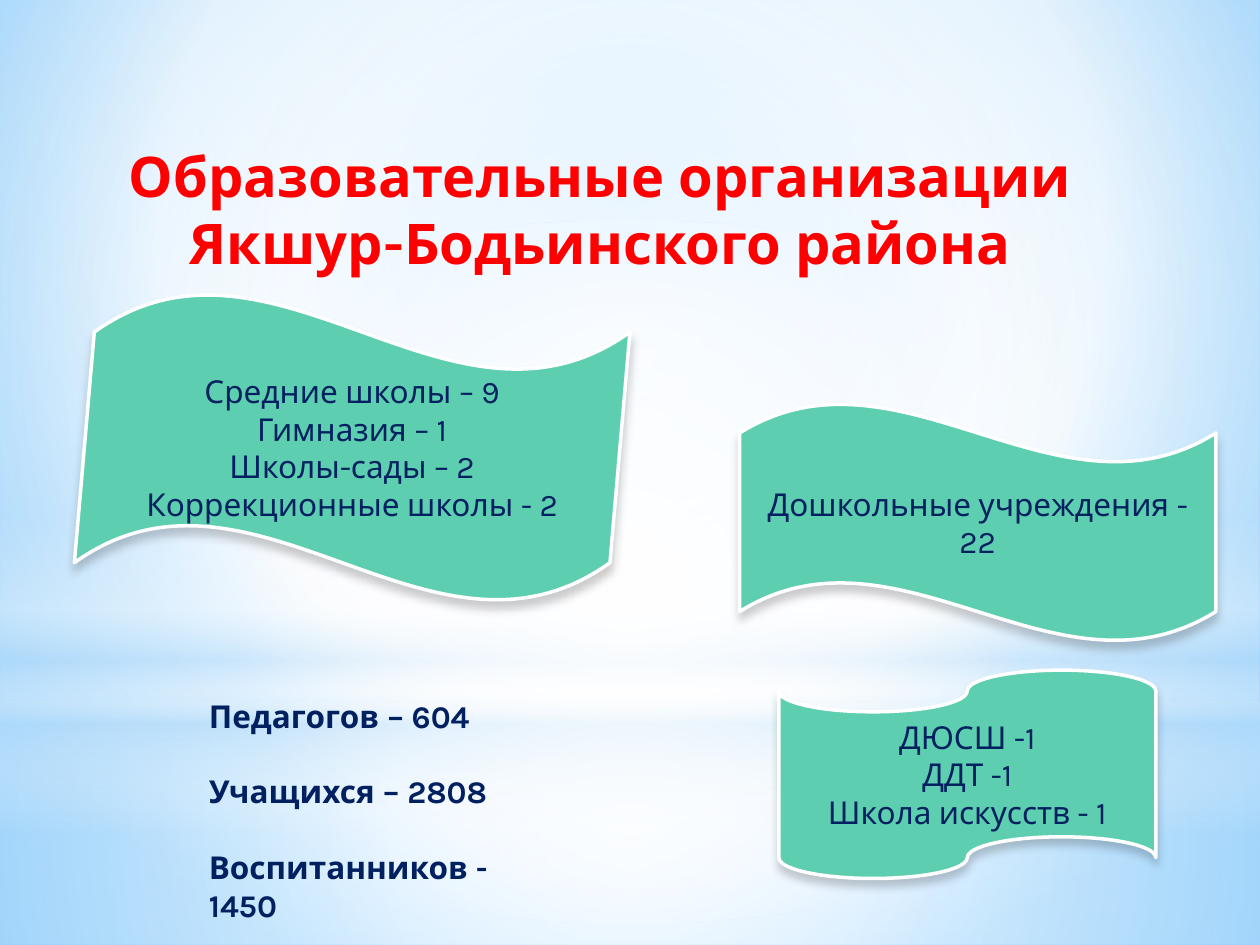
from lxml import etree
from pptx import Presentation
from pptx.dml.color import RGBColor
from pptx.enum import shapes, text
from pptx.oxml import ns
from pptx.util import Cm, Pt

FONT = "Karla"
COLORS = {"title": "FF0000", "text": "002060", "card": "5DCEAF", "white": "FFFFFF",
          "sky": "B4DCFA", "edge": "9ED5FF", "deep": "5BB9FF", "shadow": "000000"}
KIND = shapes.MSO_SHAPE
CENTER = (50, 50, 50, 50)

# Gradient stops: position %, colour, opacity %
BACKGROUND = [(0, "edge", 100), (60, "white", 100), (100, "deep", 100)]
# Shape, box in cm, stops, focus rectangle (None: top to bottom)
GLOWS = [
    (KIND.RECTANGLE, (0, 14.17, 25.4, 4.88),
     [(0, "white", 91), (37, "white", 76), (100, "sky", 79)], CENTER),
    (KIND.RECTANGLE, (0, 0, 25.4, 14.17),
     [(0, "white", 89), (48, "white", 62), (100, "sky", 79)], CENTER),
    (KIND.RECTANGLE, (0, 10.46, 25.4, 6.35),
     [(0, "white", 0), (29, "white", 30), (45, "sky", 40),
      (55, "white", 26), (65, "sky", 60), (100, "white", 0)], None),
    (KIND.OVAL, (0, 4.45, 25.4, 14.17),
     [(0, "white", 100), (56, "white", 0)], CENTER),
]
TITLE = "Образовательные организации Якшур-Бодьинского района"
TITLE_BOX = (1.5, 2.72, 21.2, 4.7)
# Shape, box in cm, adjustments, lines
CARDS = [
    (KIND.WAVE, (1.5, 5.92, 11.2, 6.2), (0.125, -0.018),
     ["Средние школы – 9", "Гимназия – 1", "Школы-сады – 2", "Коррекционные школы - 2"]),
    (KIND.WAVE, (14.91, 8.13, 9.6, 4.8), (), ["Дошкольные учреждения - 22"]),
    (KIND.FLOWCHART_PUNCHED_TAPE, (15.7, 13.51, 7.6, 4.2), (),
     ["ДЮСШ -1", "ДДТ -1", "Школа искусств - 1"]),
]
TOTALS = ["Педагогов – 604", "Учащихся – 2808", "Воспитанников - 1450"]
TOTALS_BOX = (3.96, 13.92, 7.34, 4.11)


def rgb(name):
    return RGBColor.from_string(COLORS[name])


def box_of(values):
    return [Cm(v) for v in values]


def add_xml(parent, tag, **attrs):
    return etree.SubElement(parent, ns.qn("a:" + tag), {k: str(v) for k, v in attrs.items()})


def add_color(parent, name, opacity):
    color = add_xml(parent, "srgbClr", val=COLORS[name])
    add_xml(color, "alpha", val=opacity * 1000)


def set_gradient(fill, holder, stops, focus):
    """Replace the gradient in holder with one that has these stops."""
    fill.gradient()
    grad = holder.find(".//" + ns.qn("a:gradFill"))
    for child in list(grad):
        grad.remove(child)
    stop_list = add_xml(grad, "gsLst")
    for position, name, opacity in stops:
        add_color(add_xml(stop_list, "gs", pos=position * 1000), name, opacity)
    if focus:
        circle = add_xml(grad, "path", path="circle")
        add_xml(circle, "fillToRect", **{side: v * 1000 for side, v in zip("ltrb", focus)})
    else:
        add_xml(grad, "lin", ang=90 * 60000, scaled=0)


def write(tf, lines, size, color, align, bold=False, gap=0):
    tf.word_wrap = True
    for i, line in enumerate(lines):
        p = tf.paragraphs[0] if i == 0 else tf.add_paragraph()
        p.text = line
        p.alignment = align
        p.space_before = Pt(gap if i else 0)
        p.font.name, p.font.size, p.font.bold = FONT, Pt(size), bold
        p.font.color.rgb = rgb(color)


def add_glow(s, kind, box, stops, focus):
    sp = s.shapes.add_shape(kind, *box_of(box))
    sp.shadow.inherit = False
    sp.line.fill.background()
    set_gradient(sp.fill, sp._element.spPr, stops, focus)


def add_card(s, kind, box, adjustments, lines):
    sp = s.shapes.add_shape(kind, *box_of(box))
    for i, value in enumerate(adjustments):
        sp.adjustments[i] = value
    sp.fill.solid()
    sp.fill.fore_color.rgb = rgb("card")
    sp.line.color.rgb = rgb("white")
    sp.line.width = Pt(2)
    sp.shadow.inherit = False
    effects = sp._element.spPr.find(ns.qn("a:effectLst"))
    shadow = add_xml(effects, "outerShdw", blurRad=Pt(5), dist=Pt(4),
                     dir=90 * 60000, rotWithShape=0)
    add_color(shadow, "shadow", 20)
    sp.text_frame.vertical_anchor = text.MSO_ANCHOR.MIDDLE
    write(sp.text_frame, lines, 18, "text", text.PP_ALIGN.CENTER)


def main():
    prs = Presentation()
    prs.slide_width, prs.slide_height = Cm(25.4), Cm(19.05)
    s = prs.slides.add_slide(prs.slide_layouts[5])
    set_gradient(s.background.fill, s._element, BACKGROUND, (20, 10, 20, 60))
    for glow in GLOWS:
        add_glow(s, *glow)

    title = s.shapes.title
    s.shapes._spTree.append(title._element)  # in front of the glows
    title.left, title.top, title.width, title.height = box_of(TITLE_BOX)
    title.text_frame.vertical_anchor = text.MSO_ANCHOR.TOP
    write(title.text_frame, [TITLE], 32, "title", text.PP_ALIGN.CENTER, bold=True)

    for card in CARDS:
        add_card(s, *card)
    totals = s.shapes.add_textbox(*box_of(TOTALS_BOX))
    write(totals.text_frame, TOTALS, 18, "text", text.PP_ALIGN.LEFT, bold=True, gap=21.6)
    prs.save("out.pptx")


if __name__ == "__main__":
    main()
